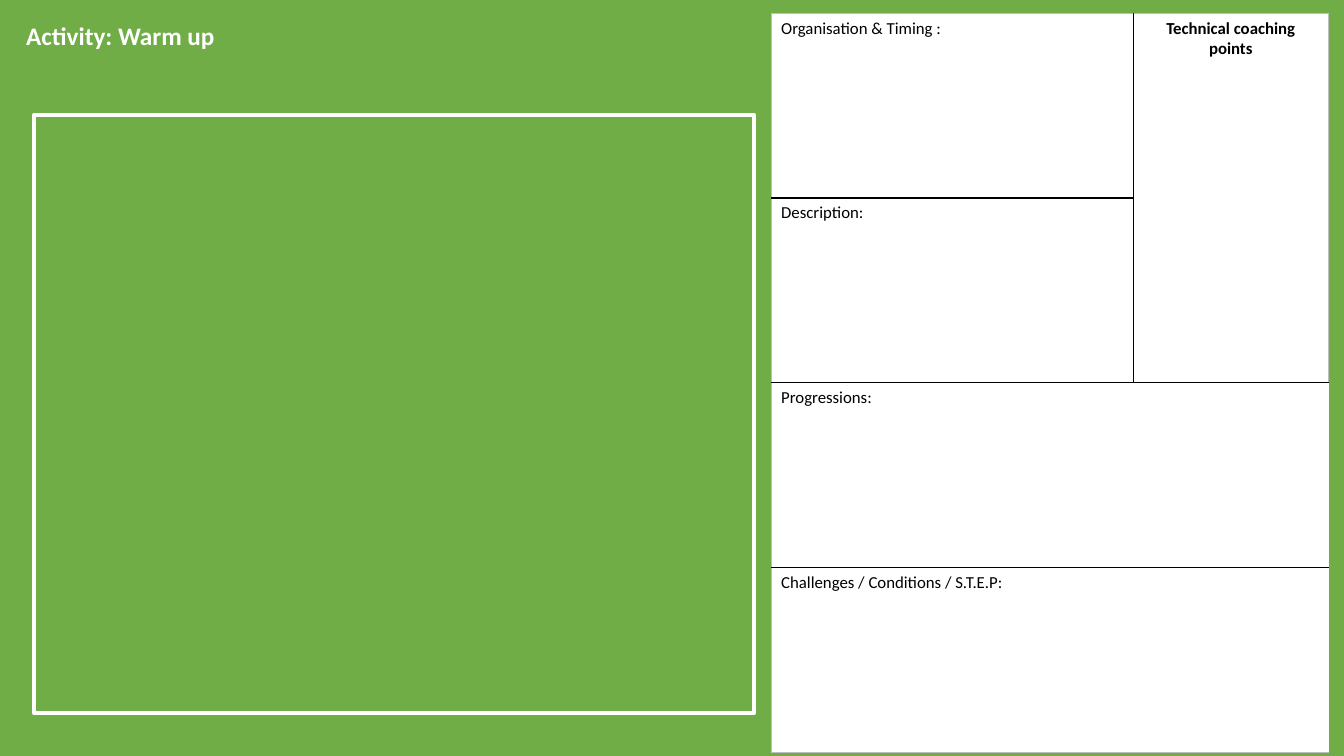
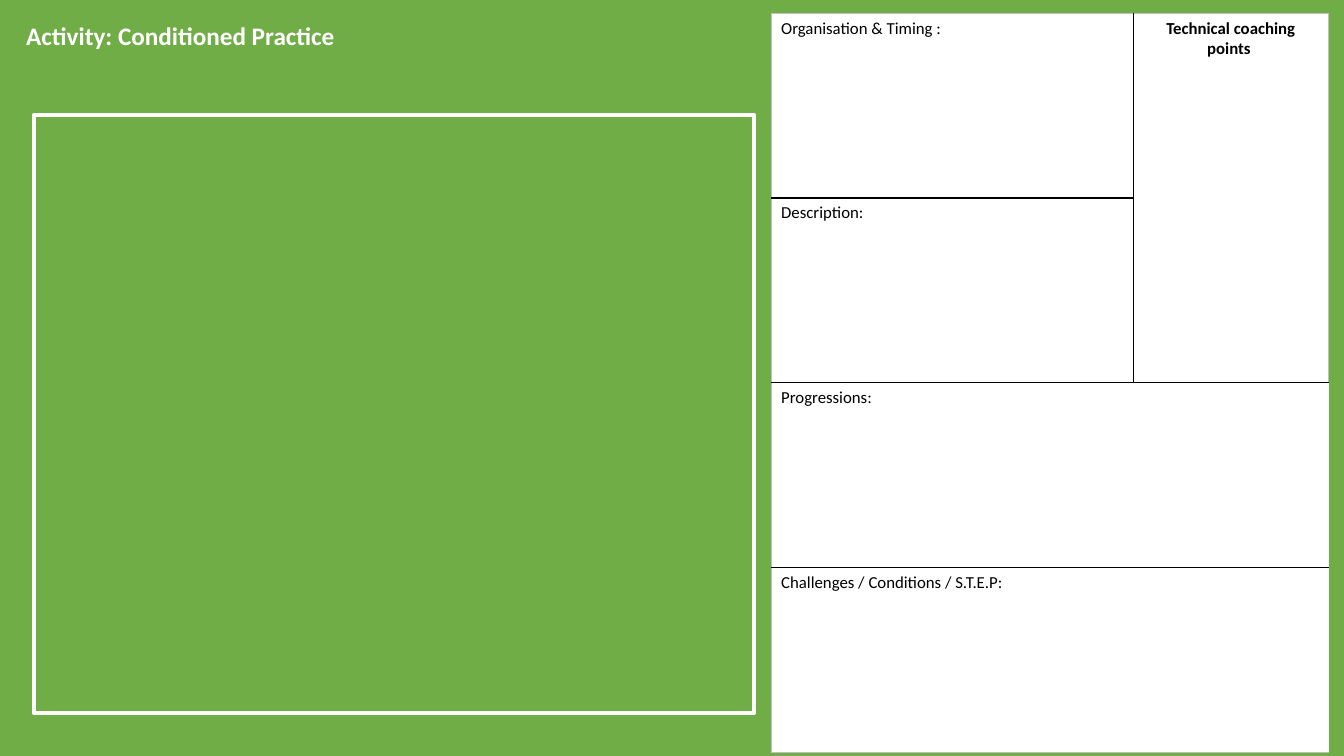
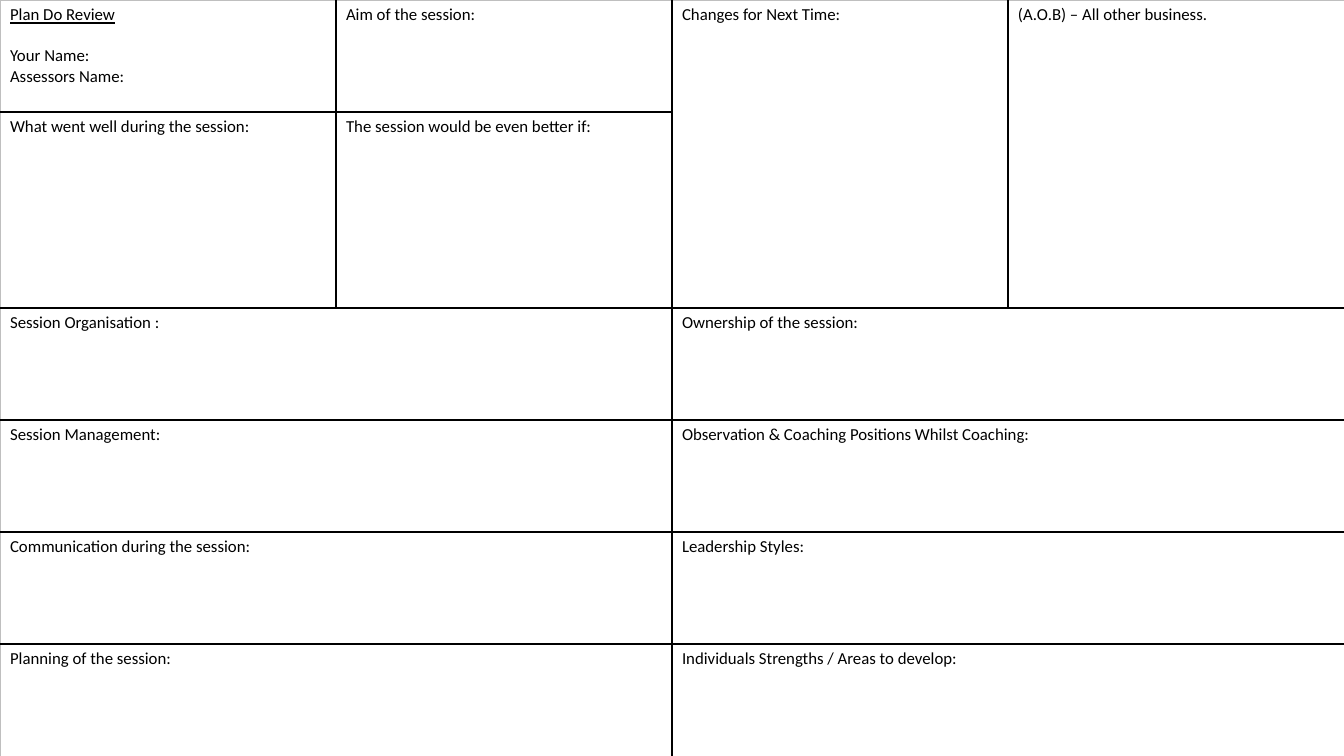
from dataclasses import dataclass

from lxml.etree import SubElement
from pptx import Presentation
from pptx.dml.color import RGBColor
from pptx.enum.shapes import MSO_SHAPE
from pptx.enum.text import MSO_ANCHOR, PP_ALIGN
from pptx.oxml.ns import qn
from pptx.util import Pt


@dataclass(frozen=True)
class Theme:
    font: str = "Calibri"
    pitch: str = "70AD47"
    white: str = "FFFFFF"
    ink: str = "000000"
    edge: str = "BFBFBF"
    title_size: float = 18
    body_size: float = 12
    frame_line: float = 3
    grid_line: float = 1
    edge_line: float = 0.5


THEME = Theme()
SLIDE_SIZE = (960, 540)
TITLE_BOX = (11.5, 3, 565, 67.5)
TITLE_INSET = 14
DIAGRAM_BOX = (24.5, 82, 514, 427.5)

ACTIVITIES = [
    ("Activity: Warm up", "Technical coaching points"),
    ("Activity: Conditioned Practice", "Technical coaching points "),
]
PLAN_ORIGIN = (550.8, 9.4)
PLAN_COLUMNS = [258.6, 139.6]
PLAN_ROWS = [132] * 4
PLAN_CELLS = [
    (0, 0, 1, 1, "Organisation & Timing :"),
    (1, 0, 1, 1, "Description:"),
    (2, 0, 1, 2, "Progressions:"),
    (3, 0, 1, 2, "Challenges / Conditions / S.T.E.P:"),
]

REVIEW_COLUMNS = [240] * 4
REVIEW_ROWS = [80, 140, 80, 80, 80, 80]
REVIEW_HEADING = "Plan Do Review"
REVIEW_GAP = 14.65
REVIEW_TOP = [
    (0, 0, 1, 1, f"{REVIEW_HEADING}\nYour Name:\nAssessors Name:"),
    (0, 1, 1, 1, "Aim of the session:"),
    (0, 2, 2, 1, "Changes for Next Time:"),
    (0, 3, 2, 1, "(A.O.B) – All other business."),
    (1, 0, 1, 1, "What went well during the session:"),
    (1, 1, 1, 1, "The session would be even better if:"),
]
REVIEW_PAIRS = [
    ("Session Organisation :", "Ownership of the session:"),
    ("Session Management:", "Observation & Coaching Positions Whilst Coaching:"),
    ("Communication during the session:", "Leadership Styles:"),
    ("Planning of the session:", "Individuals Strengths / Areas to develop:"),
]


def points(values):
    return [Pt(value) for value in values]


def rgb(colour):
    return RGBColor.from_string(colour)


def style_font(font, size, colour, bold=False):
    font.name = THEME.font
    font.size = Pt(size)
    font.bold = bold
    font.color.rgb = rgb(colour)


def paint_background(page, colour):
    page.background.fill.solid()
    page.background.fill.fore_color.rgb = rgb(colour)


def add_border(cell, side, width, colour):
    border = SubElement(cell._tc.get_or_add_tcPr(), qn(f"a:ln{side}"), w=str(Pt(width)))
    if width:
        fill = SubElement(border, qn("a:solidFill"))
        SubElement(fill, qn("a:srgbClr"), val=colour)
    else:
        SubElement(border, qn("a:noFill"))


def rule_grid(table, owners):
    neighbours = {"L": (0, -1), "R": (0, 1), "T": (-1, 0), "B": (1, 0)}
    for (row, column), owner in owners.items():
        cell = table.cell(row, column)
        for side, (down, across) in neighbours.items():
            neighbour = owners.get((row + down, column + across))
            if neighbour is None:
                add_border(cell, side, THEME.edge_line, THEME.edge)
            else:
                width = 0 if neighbour == owner else THEME.grid_line
                add_border(cell, side, width, THEME.ink)
        cell.fill.solid()
        cell.fill.fore_color.rgb = rgb(THEME.white)


def add_form(slide, origin, columns, rows, cells):
    frame = slide.shapes.add_table(
        len(rows), len(columns), *points((*origin, sum(columns), sum(rows)))
    )
    table = frame.table
    table.first_row = table.horz_banding = False
    for column, width in zip(table.columns, columns):
        column.width = Pt(width)
    for row, height in zip(table.rows, rows):
        row.height = Pt(height)
    owners = {}
    for top, left, depth, breadth, label in cells:
        cell = table.cell(top, left)
        if depth * breadth > 1:
            cell.merge(table.cell(top + depth - 1, left + breadth - 1))
        for row in range(top, top + depth):
            for column in range(left, left + breadth):
                owners[row, column] = (top, left)
        cell.text_frame.text = label
        for paragraph in cell.text_frame.paragraphs:
            for run in paragraph.runs:
                style_font(run.font, THEME.body_size, THEME.ink)
    rule_grid(table, owners)
    return table


def prepare_activity_layout(layout):
    paint_background(layout, THEME.pitch)
    title = layout.placeholders[0]
    title.left, title.top, title.width, title.height = points(TITLE_BOX)
    title.text_frame.vertical_anchor = MSO_ANCHOR.TOP
    title.text_frame.margin_top = Pt(TITLE_INSET)


def add_activity(deck, layout, activity, coaching):
    slide = deck.slides.add_slide(layout)
    title = slide.shapes.title
    title.text_frame.text = activity
    heading = title.text_frame.paragraphs[0]
    heading.alignment = PP_ALIGN.LEFT
    heading.line_spacing = 0.9
    style_font(heading.runs[0].font, THEME.title_size, THEME.white, True)

    diagram = slide.shapes.add_shape(MSO_SHAPE.RECTANGLE, *points(DIAGRAM_BOX))
    diagram.shadow.inherit = False
    diagram.fill.background()
    diagram.line.color.rgb = rgb(THEME.white)
    diagram.line.width = Pt(THEME.frame_line)

    cells = PLAN_CELLS + [(0, 1, 2, 1, coaching)]
    plan = add_form(slide, PLAN_ORIGIN, PLAN_COLUMNS, PLAN_ROWS, cells)
    coaching_points = plan.cell(0, 1).text_frame.paragraphs[0]
    coaching_points.alignment = PP_ALIGN.CENTER
    coaching_points.runs[0].font.bold = True


def add_review(deck, layout):
    slide = deck.slides.add_slide(layout)
    paint_background(slide, THEME.white)
    cells = REVIEW_TOP + [
        (row, 2 * half, 1, 2, label)
        for row, pair in enumerate(REVIEW_PAIRS, start=2)
        for half, label in enumerate(pair)
    ]
    review = add_form(slide, (0, 0), REVIEW_COLUMNS, REVIEW_ROWS, cells)
    heading = review.cell(0, 0).text_frame.paragraphs[0]
    heading.space_after = Pt(REVIEW_GAP)
    heading.runs[0].font.underline = True


def main():
    deck = Presentation()
    deck.slide_width, deck.slide_height = points(SLIDE_SIZE)
    activity_layout = deck.slide_layouts.get_by_name("Title Only")
    prepare_activity_layout(activity_layout)
    for activity, coaching in ACTIVITIES:
        add_activity(deck, activity_layout, activity, coaching)
    add_review(deck, deck.slide_layouts.get_by_name("Blank"))
    deck.save("out.pptx")


if __name__ == "__main__":
    main()
